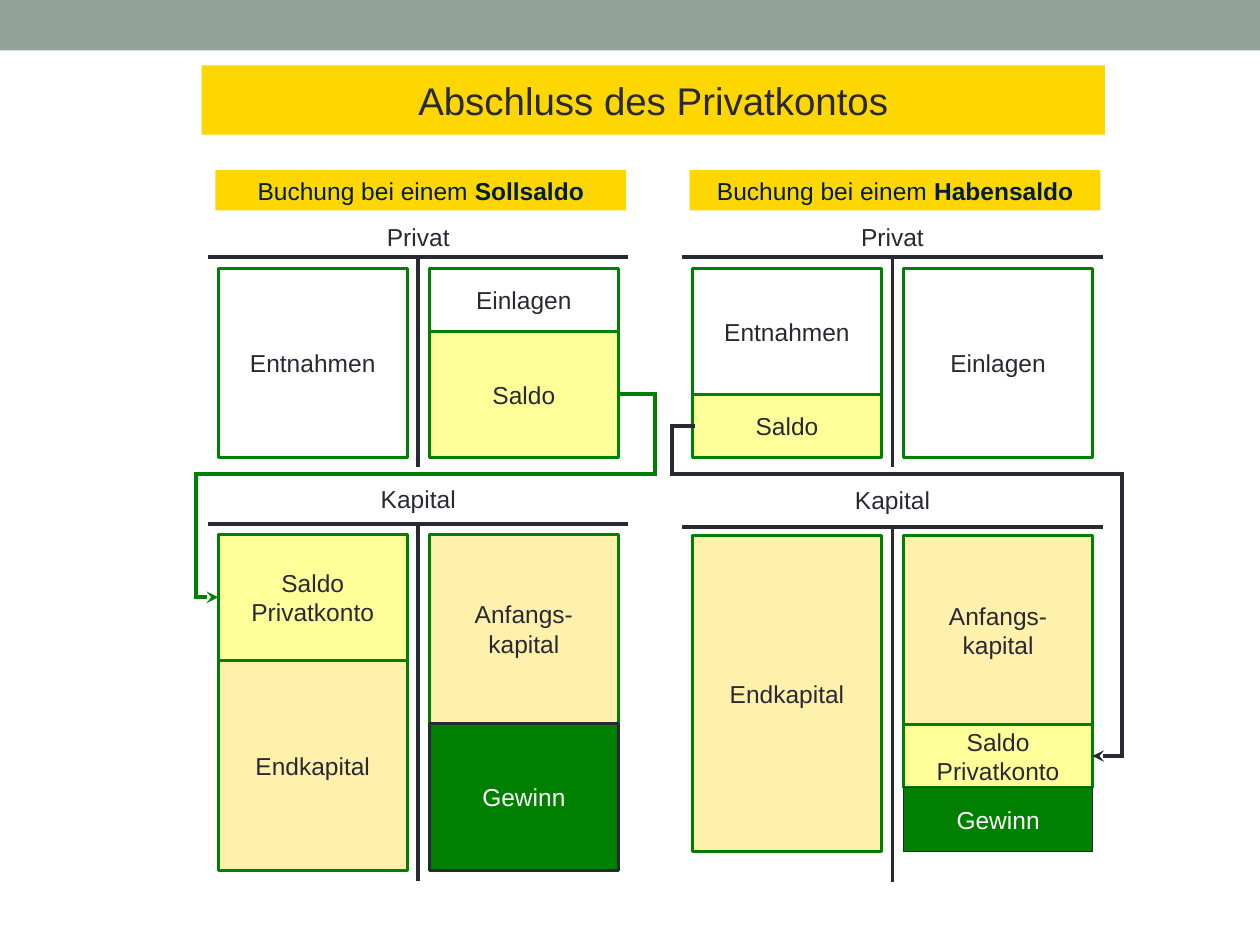
from itertools import pairwise
from lxml import etree
from pptx import Presentation
from pptx.dml.color import RGBColor
from pptx.enum.shapes import MSO_CONNECTOR, MSO_SHAPE
from pptx.enum.text import MSO_ANCHOR, PP_ALIGN
from pptx.oxml.ns import qn
from pptx.util import Pt

RECT, STRAIGHT = MSO_SHAPE.RECTANGLE, MSO_CONNECTOR.STRAIGHT
MIDDLE, CENTER = MSO_ANCHOR.MIDDLE, PP_ALIGN.CENTER

COLORS = {"bar": "93A299", "gold": "FFD700", "ink": "292934", "navy": "001D3A",
          "green": "008000", "yellow": "FFFF99", "cream": "FFF1AB", "white": "FFFFFF"}

# fill, border, border width, text colour
STYLES = {"open": (None, "green", 1.5, "ink"),
          "balance": ("yellow", "green", 1.5, "ink"),
          "capital": ("cream", "green", 1.5, "ink"),
          "profit": ("green", "ink", 1.5, "white"),
          "thin profit": ("green", "ink", 0.75, "white")}

TITLE = "Abschluss des Privatkontos"
PRIVAT = {"name": "Privat", "label": 123.1, "rule": 146.9, "end": 267.1, "boxes": 153.4}

# Each column lists its boxes from top to bottom: text, height, style
SIDES = [
    {"axis": 239, "heading": "Sollsaldo", "accounts": [
        (PRIVAT,
         [("Entnahmen", 108, "open")],
         [("Einlagen", 36, "open"), ("Saldo", 72, "balance")]),
        ({"name": "Kapital", "label": 272.9, "rule": 299.5, "end": 503.3, "boxes": 305.3},
         [("Saldo\nPrivatkonto", 72, "balance"), ("Endkapital", 120.2, "capital")],
         [("Anfangs-\nkapital", 108, "capital"), ("Gewinn", 84.2, "profit")])],
     "color": "green",
     "route": [(354, 225), (374.4, 225), (374.4, 270.7), (112, 270.7),
               (112, 341.3), (124.7, 341.3)]},
    {"axis": 510, "heading": "Habensaldo", "accounts": [
        (PRIVAT,
         [("Entnahmen", 72, "open"), ("Saldo", 36, "balance")],
         [("Einlagen", 108, "open")]),
        ({"name": "Kapital", "label": 273.8, "rule": 301, "end": 504, "boxes": 306},
         [("Endkapital", 180.7, "capital")],
         [("Anfangs-\nkapital", 108, "capital"), ("Saldo\nPrivatkonto", 36, "balance"),
          ("Gewinn", 36.7, "thin profit")])],
     "color": "ink",
     "route": [(396, 243.4), (383.8, 243.4), (383.8, 270.7), (641, 270.7),
               (641, 432), (624.3, 432)]},
]

RULE_HALF = 120
BOX_W = 108
COLUMN_OFFSETS = (-114.25, 6.4)
HEADING_W, HEADING_TOP, HEADING_H = 234.7, 97.2, 23
LABEL_W, LABEL_H = 60, 23.8


def rgb(name):
    return RGBColor.from_string(COLORS[name])


def write(shape, lines, color, size=14):
    """Fill a shape with centred lines, each a list of (text, bold) runs."""
    tf = shape.text_frame
    tf.word_wrap = False
    tf.vertical_anchor = MIDDLE
    for i, runs in enumerate(lines):
        p = tf.add_paragraph() if i else tf.paragraphs[0]
        p.alignment = CENTER
        for text, bold in runs:
            r = p.add_run()
            r.text = text
            for key, value in {"name": "Arial", "size": Pt(size), "bold": bold}.items():
                setattr(r.font, key, value)
            r.font.color.rgb = rgb(color)


def plain(text):
    return [[(line, False)] for line in text.split("\n")]


def add_box(s, x, y, w, h, fill=None, border=None, width=0):
    sp = s.shapes.add_shape(RECT, Pt(x), Pt(y), Pt(w), Pt(h))
    sp.shadow.inherit = False
    if fill:
        sp.fill.solid()
        sp.fill.fore_color.rgb = rgb(fill)
    else:
        sp.fill.background()
    if border:
        sp.line.color.rgb = rgb(border)
        sp.line.width = Pt(width)
    else:
        sp.line.fill.background()
    return sp


def add_line(s, start, end, color="ink", arrow=False, cap="flat"):
    line = s.shapes.add_connector(STRAIGHT, *(Pt(v) for v in (*start, *end)))
    line.line.color.rgb = rgb(color)
    line.line.width = Pt(2.25)
    ln = line.line._get_or_add_ln()
    ln.set("cap", cap)
    if arrow:
        etree.SubElement(ln, qn("a:tailEnd"), type="stealth")
    etree.SubElement(line._element.spPr, qn("a:effectLst"))


def add_account(s, axis, account, columns):
    label = s.shapes.add_textbox(Pt(axis - LABEL_W / 2), Pt(account["label"]),
                                 Pt(LABEL_W), Pt(LABEL_H))
    write(label, plain(account["name"]), "ink")
    rule = account["rule"]
    add_line(s, (axis - RULE_HALF, rule), (axis + RULE_HALF, rule))
    add_line(s, (axis, rule), (axis, account["end"]))
    for offset, boxes in zip(COLUMN_OFFSETS, columns):
        y = account["boxes"]
        for text, height, style in boxes:
            fill, border, width, color = STYLES[style]
            sp = add_box(s, axis + offset, y, BOX_W, height, fill, border, width)
            write(sp, plain(text), color)
            y += height


def add_route(s, points, color):
    """Join the points with straight lines, the last one ending in an arrowhead."""
    legs = list(pairwise(points))
    for i, (start, end) in enumerate(legs, 1):
        last = i == len(legs)
        add_line(s, start, end, color, arrow=last, cap="flat" if last else "sq")


def main():
    prs = Presentation()
    prs.slide_width, prs.slide_height = Pt(720), Pt(540)
    s = prs.slides.add_slide(prs.slide_layouts[5])

    add_box(s, 0, 0, 720, 28.8, "bar")
    title = s.shapes.title
    place = {"left": 115.2, "top": 37.4, "width": 516.2, "height": 39.6}
    for key, value in place.items():
        setattr(title, key, Pt(value))
    title.fill.solid()
    title.fill.fore_color.rgb = rgb("gold")
    write(title, plain(TITLE), "ink", 22)

    for side in SIDES:
        axis = side["axis"]
        heading = add_box(s, axis - HEADING_W / 2 + 1.5, HEADING_TOP,
                          HEADING_W, HEADING_H, "gold")
        write(heading, [[("Buchung bei einem ", False), (side["heading"], True)]], "navy")
        for account, *columns in side["accounts"]:
            add_account(s, axis, account, columns)
        add_route(s, side["route"], side["color"])

    prs.save("out.pptx")


if __name__ == "__main__":
    main()
